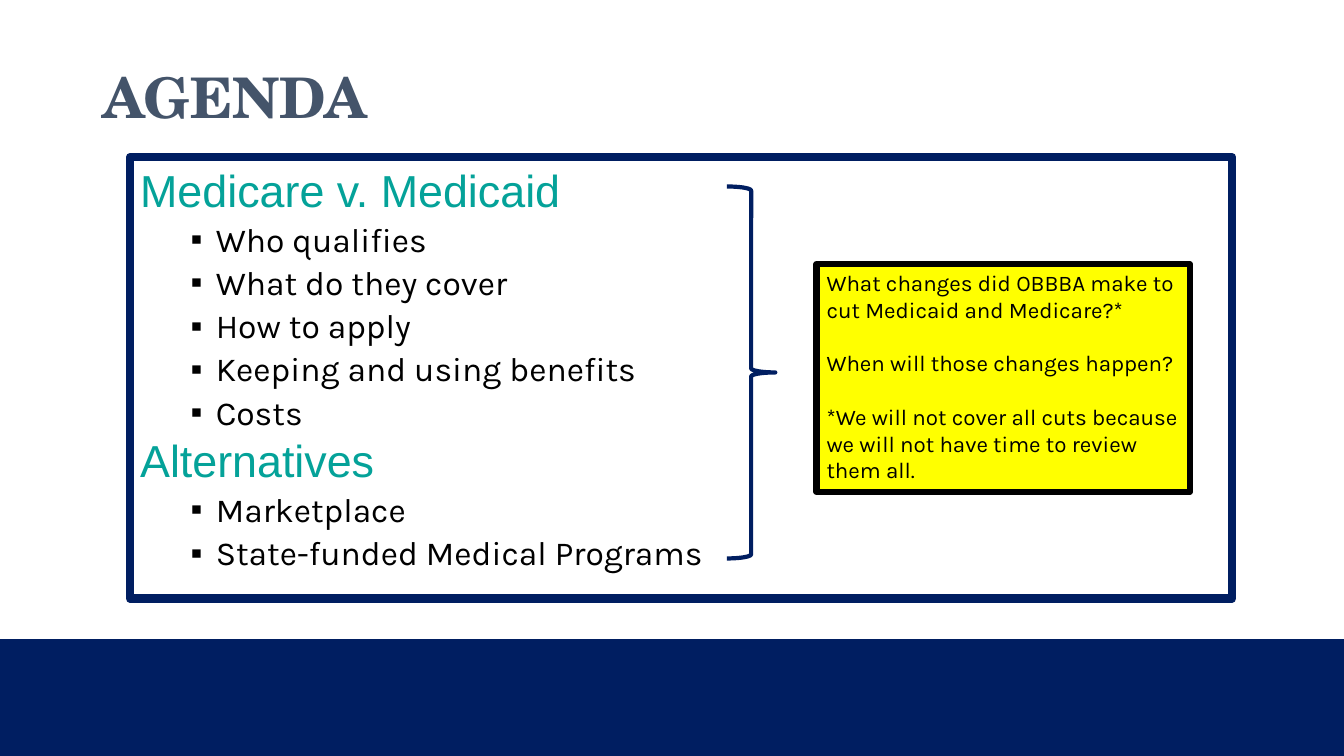
from dataclasses import dataclass

from lxml.etree import SubElement
from pptx import Presentation
from pptx.dml.color import RGBColor as RGB
from pptx.enum.shapes import MSO_SHAPE as SHAPE
from pptx.enum.text import MSO_ANCHOR as ANCHOR, MSO_AUTO_SIZE as FIT, PP_ALIGN as ALIGN
from pptx.oxml.ns import qn
from pptx.util import Inches, Pt


@dataclass(frozen=True)
class Theme:
    navy: str = "001E61"
    slate: str = "44546A"
    teal: str = "04A299"
    yellow: str = "FFFF00"
    black: str = "000000"
    title_font: str = "TeX Gyre Schola"
    heading_font: str = "Arial"
    text_font: str = "Karla"
    title_size: int = 40
    heading_size: int = 32
    item_size: int = 24
    note_size: int = 16


T = Theme()

TOPICS = {
    "Medicare v. Medicaid": [
        "Who qualifies",
        "What do they cover",
        "How to apply",
        "Keeping and using benefits",
        "Costs",
    ],
    "Alternatives": ["Marketplace", "State-funded Medical Programs"],
}
NOTES = [
    "What changes did OBBBA make to cut Medicaid and Medicare?*",
    "When will those changes happen?",
    "*We will not cover all cuts because we will not have time to review them all.",
]


def place(sp, box):
    sp.left, sp.top, sp.width, sp.height = (Inches(v) for v in box)


def add_text(tf, text, *, font, size, color, bold=False, before=0, spacing=1.0,
             level=0, bullet=None):
    first = len(tf.paragraphs) == 1 and not tf.paragraphs[0].runs
    p = tf.paragraphs[0] if first else tf.add_paragraph()
    p.level = level
    p.alignment = ALIGN.LEFT
    p.line_spacing = spacing
    p.space_before = Pt(0 if first else before)
    p.space_after = Pt(0)
    pPr = p._p.get_or_add_pPr()
    pPr.set("marL", str(Inches(0.75 if bullet else 0)))
    pPr.set("indent", str(Inches(-0.25 if bullet else 0)))
    if bullet:
        SubElement(pPr, qn("a:buChar"), char=bullet)
    else:
        SubElement(pPr, qn("a:buNone"))
    r = p.add_run()
    r.text = text
    r.font.name = font
    r.font.size = Pt(size)
    r.font.bold = bold
    r.font.color.rgb = RGB.from_string(color)


def add_box(slide, kind, box, fill=None, line=None, width=0):
    sp = slide.shapes.add_shape(kind, *(Inches(v) for v in box))
    sp.shadow.inherit = False
    if fill:
        sp.fill.solid()
        sp.fill.fore_color.rgb = RGB.from_string(fill)
    else:
        sp.fill.background()
    if line:
        sp.line.color.rgb = RGB.from_string(line)
        sp.line.width = Pt(width)
    else:
        sp.line.fill.background()
    return sp


def add_title(slide, box):
    sp = slide.shapes.title
    place(sp, box)
    tf = sp.text_frame
    tf.auto_size = FIT.NONE
    tf.vertical_anchor = ANCHOR.MIDDLE
    add_text(tf, "AGENDA", font=T.title_font, size=T.title_size, color=T.slate,
             bold=True, spacing=0.9)


def add_topics(slide, box):
    sp = slide.placeholders[1]
    place(sp, box)
    sp.line.color.rgb = RGB.from_string(T.navy)
    sp.line.width = Pt(6)
    tf = sp.text_frame
    tf.auto_size = FIT.NONE
    for heading, items in TOPICS.items():
        add_text(tf, heading, font=T.heading_font, size=T.heading_size, color=T.teal)
        for item in items:
            add_text(tf, item, font=T.text_font, size=T.item_size, color=T.black,
                     before=5, spacing=0.9, level=1, bullet="▪")


def add_changes(slide, box):
    x, y, w, h = box
    add_box(slide, SHAPE.RIGHT_BRACE, (x, y, 0.48, h), line=T.navy, width=3)
    sp = add_box(slide, SHAPE.RECTANGLE, (x + 0.89, y + 0.77, w - 0.89, 2.26),
                 fill=T.yellow, line=T.black, width=4.5)
    tf = sp.text_frame
    tf.word_wrap = True
    tf.vertical_anchor = ANCHOR.TOP
    for note in NOTES:
        add_text(tf, note, font=T.text_font, size=T.note_size, color=T.black, before=19)


def build_agenda(slide):
    add_box(slide, SHAPE.RECTANGLE, (0, 6.34, 13.33, 1.16), fill=T.navy)
    add_title(slide, (0.92, 0, 9.98, 2))
    add_topics(slide, (1.29, 1.56, 10.93, 4.38))
    add_changes(slide, (7.21, 1.85, 4.59, 3.69))


def main():
    prs = Presentation()
    prs.slide_width = Inches(13.33)
    prs.slide_height = Inches(7.5)
    build_agenda(prs.slides.add_slide(prs.slide_layouts[1]))
    prs.save("out.pptx")


if __name__ == "__main__":
    main()
